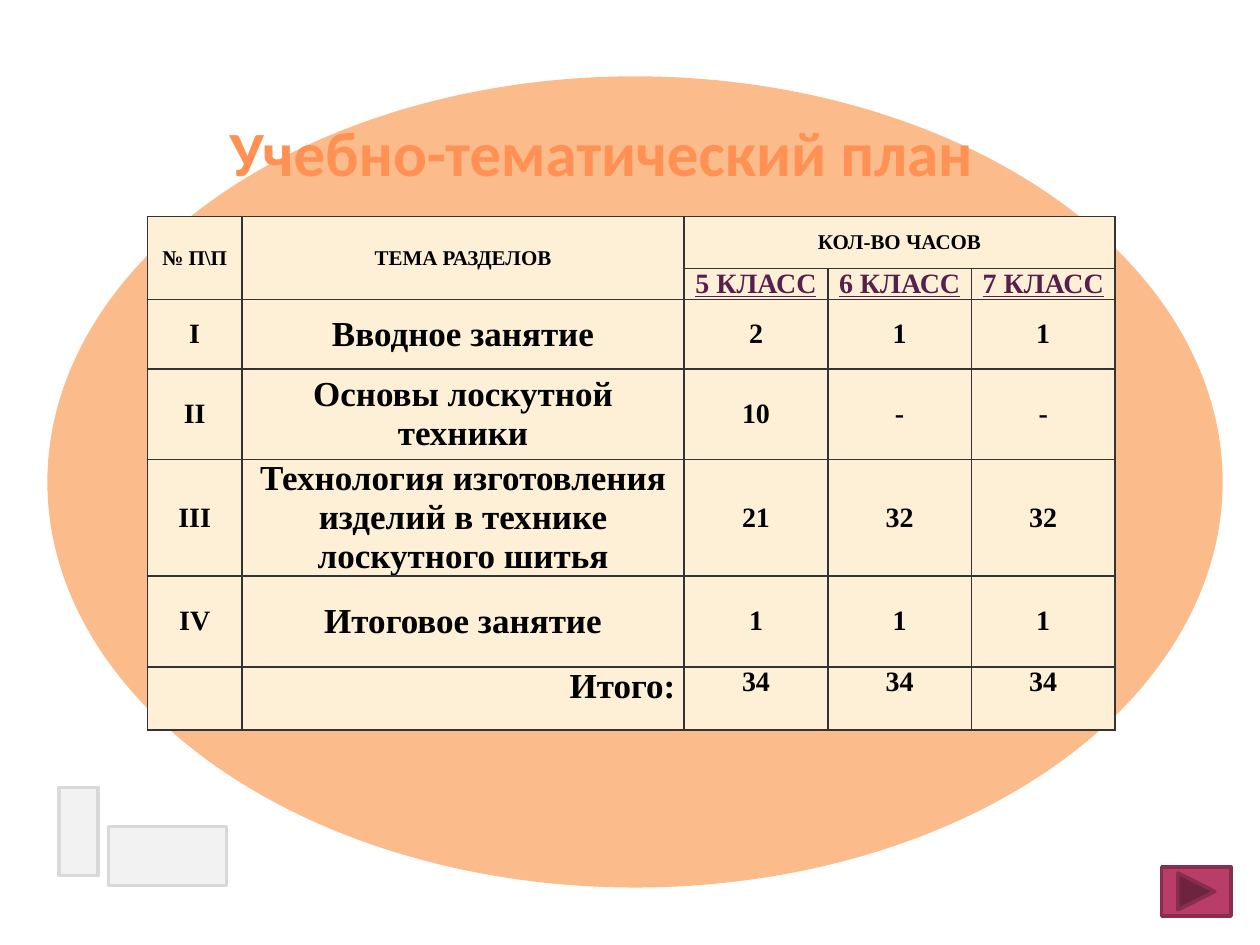
from lxml import etree
from pptx import Presentation, util as u
from pptx.dml.color import RGBColor
from pptx.enum import shapes, text
from pptx.oxml import ns

PEACH = RGBColor(0xFC, 0xBB, 0x8B)
ORANGE = RGBColor(0xFF, 0x91, 0x54)
CREAM = RGBColor(0xFE, 0xF0, 0xD7)
BLACK = RGBColor(0, 0, 0)
BORDER = RGBColor(0x33, 0x33, 0x33)
PLUM = RGBColor(0x58, 0x1F, 0x4D)
PALE = RGBColor(0xF2, 0xF2, 0xF2)
GRAY = RGBColor(0xD9, 0xD9, 0xD9)
CRIMSON = RGBColor(0xB8, 0x3D, 0x68)
WINE = RGBColor(0x88, 0x2D, 0x4D)

GRADES = ["5 КЛАСС", "6 КЛАСС", "7 КЛАСС"]
PLAN = [
    ["№ П\\П", "ТЕМА РАЗДЕЛОВ", "КОЛ-ВО ЧАСОВ", "", ""],
    ["", "", *GRADES],
    ["I", "Вводное занятие", "2", "1", "1"],
    ["II", "Основы лоскутной техники", "10", "-", "-"],
    ["III", "Технология изготовления изделий в технике лоскутного шитья", "21", "32", "32"],
    ["IV", "Итоговое занятие", "1", "1", "1"],
    ["", "Итого:", "34", "34", "34"],
]
COLUMNS = [0.75, 3.51, 1.14, 1.14, 1.14]
ROWS = [0.41, 0.23, 0.55, 0.72, 0.72, 0.72, 0.5]


def add_figure(slide, kind, box, fill, line):
    """Add a filled and outlined preset shape."""
    figure = slide.shapes.add_shape(kind, *map(u.Inches, box))
    figure.shadow.inherit = False
    figure.fill.solid()
    figure.fill.fore_color.rgb = fill
    figure.line.color.rgb = line
    figure.line.width = u.Pt(2)


def add_run(paragraph, wording, font_name, size, color, underline=False):
    """Add one bold run to a paragraph."""
    run = paragraph.add_run()
    run.text = wording
    run.font.name = font_name
    run.font.size = u.Pt(size)
    run.font.bold = True
    run.font.color.rgb = color
    if underline:
        run.font.underline = True


def set_title(slide, wording):
    """Fill the title placeholder and bring it in front of the backdrop."""
    title = slide.shapes.title
    slide.shapes.element.append(title.element)
    title.left, title.top, title.width, title.height = map(u.Inches, (1.72, 0.55, 6.42, 0.95))
    frame = title.text_frame
    frame.auto_size = text.MSO_AUTO_SIZE.NONE
    frame.vertical_anchor = text.MSO_ANCHOR.BOTTOM
    frame.margin_top = frame.margin_bottom = 0
    paragraph = frame.paragraphs[0]
    paragraph.alignment = text.PP_ALIGN.LEFT
    add_run(paragraph, wording, "Calibri", 36, ORANGE)


def set_borders(cell):
    """Draw thin dark lines on all four sides of a cell."""
    properties = cell._tc.get_or_add_tcPr()
    for place, side in enumerate(("lnL", "lnR", "lnT", "lnB")):
        line = etree.Element(ns.qn(f"a:{side}"), w=str(u.Pt(1)))
        fill = etree.SubElement(line, ns.qn("a:solidFill"))
        etree.SubElement(fill, ns.qn("a:srgbClr"), val=str(BORDER))
        properties.insert(place, line)


def fill_cell(cell, row, column, wording):
    """Format one cell of the plan by its row and column."""
    is_grade, is_total = row == 1, row == len(PLAN) - 1
    cell.fill.solid()
    cell.fill.fore_color.rgb = CREAM
    set_borders(cell)
    cell.margin_left = cell.margin_right = u.Inches(0.07)
    cell.margin_top = cell.margin_bottom = 0
    cell.vertical_anchor = text.MSO_ANCHOR.TOP if is_total else text.MSO_ANCHOR.MIDDLE
    paragraph = cell.text_frame.paragraphs[0]
    is_sum_label = is_total and column == 1
    paragraph.alignment = text.PP_ALIGN.RIGHT if is_sum_label else text.PP_ALIGN.CENTER
    size = 12 if row == 0 else 20 if column == 1 else 16
    if wording:
        add_run(paragraph, wording, "Times New Roman", size, PLUM if is_grade else BLACK, is_grade)
    else:
        paragraph.font.size = u.Pt(8)


def add_plan(slide):
    """Add the table of topics and hours."""
    box = map(u.Inches, (1.17, 1.72, sum(COLUMNS), sum(ROWS)))
    plan = slide.shapes.add_table(len(ROWS), len(COLUMNS), *box).table
    plan.first_row = plan.horz_banding = False
    for column, width in zip(plan.columns, COLUMNS):
        column.width = u.Inches(width)
    for row, height in zip(plan.rows, ROWS):
        row.height = u.Inches(height)
    for row, wordings in enumerate(PLAN):
        for column, wording in enumerate(wordings):
            fill_cell(plan.cell(row, column), row, column, wording)
    for column in (0, 1):
        plan.cell(0, column).merge(plan.cell(1, column))
    plan.cell(0, 2).merge(plan.cell(0, 4))


def main():
    """Build the slide with the study plan."""
    deck = Presentation()
    deck.slide_width, deck.slide_height = u.Inches(10), u.Inches(7.5)
    slide = deck.slides.add_slide(deck.slide_layouts[5])
    kinds = shapes.MSO_SHAPE
    add_figure(slide, kinds.OVAL, (0.39, 0.62, 9.3, 6.41), PEACH, PEACH)
    for box in ((0.86, 6.56, 0.94, 0.47), (0.47, 6.25, 0.31, 0.7)):
        add_figure(slide, kinds.RECTANGLE, box, PALE, GRAY)
    set_title(slide, "Учебно-тематический план")
    add_plan(slide)
    add_figure(slide, kinds.ACTION_BUTTON_FORWARD_OR_NEXT, (9.22, 6.88, 0.55, 0.39), CRIMSON, WINE)
    deck.save("out.pptx")


if __name__ == "__main__":
    main()
